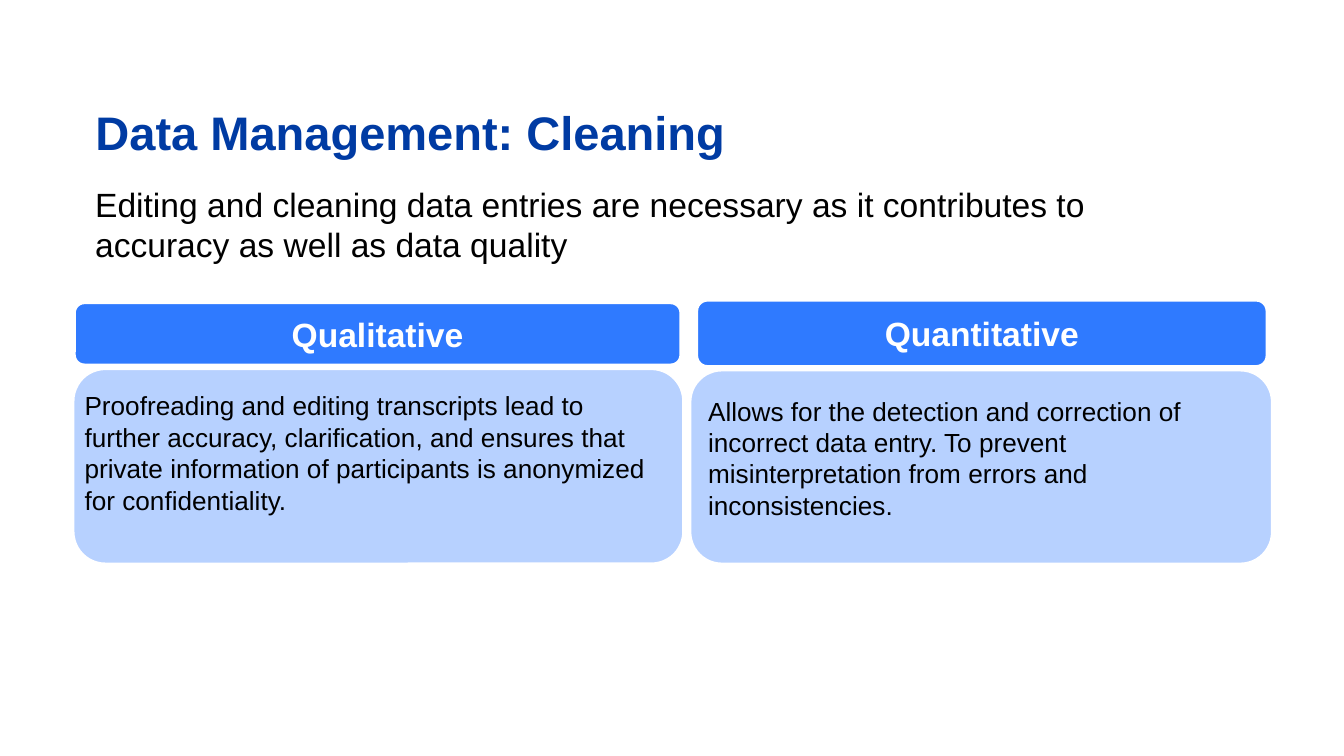
from pptx import Presentation
from pptx.dml.color import RGBColor
from pptx.enum.shapes import MSO_SHAPE as SHAPE
from pptx.enum.text import MSO_ANCHOR as ANCHOR, PP_ALIGN as ALIGN
from pptx.util import Pt

FONT = "Arial"
NAVY, BLUE, PALE = "003BA3", "2F7AFF", "B7D1FF"
BLACK, WHITE = "000000", "FFFFFF"

# Heading, heading box, panel box, body text, text box, top inset
COLUMNS = [
    ("Qualitative", (39.6, 162, 325.4, 33.8), (38.9, 197.3, 327.6, 105.1),
     "Proofreading and editing transcripts lead to further accuracy, "
     "clarification, and ensures that private information of participants "
     "is anonymized for confidentiality.",
     (40.3, 208.8, 310.6, 79.9), 0),
    ("Quantitative", (373, 160.6, 306, 36), (369.4, 198, 312.5, 104.4),
     "Allows for the detection and correction of incorrect data entry. "
     "To prevent misinterpretation from errors and inconsistencies.",
     (374.4, 208.8, 302.4, 72.7), 2.8),
]


def rgb(color):
    return RGBColor.from_string(color)


def points(box):
    return [Pt(v) for v in box]


def write(sp, text, size, color, bold=False, align=ALIGN.LEFT,
          anchor=ANCHOR.TOP, insets=(7.2, 3.6, 7.2, 3.6)):
    """Fill a shape with one paragraph; insets are left, top, right, bottom."""
    tf = sp.text_frame
    tf.word_wrap = True
    tf.vertical_anchor = anchor
    (tf.margin_left, tf.margin_top,
     tf.margin_right, tf.margin_bottom) = points(insets)
    p = tf.paragraphs[0]
    p.alignment = align
    r = p.add_run()
    r.text = text
    r.font.name = FONT
    r.font.size = Pt(size)
    r.font.bold = bold
    r.font.color.rgb = rgb(color)


def add_title(s, text, box):
    sp = s.shapes.title
    sp.left, sp.top, sp.width, sp.height = points(box)
    write(sp, text, 25.2, NAVY, bold=True, insets=(7.2, 10, 7.2, 7.2))


def add_text(s, text, box, size, **style):
    write(s.shapes.add_textbox(*points(box)), text, size, BLACK, **style)


def add_card(s, box, fill):
    sp = s.shapes.add_shape(SHAPE.ROUNDED_RECTANGLE, *points(box))
    sp.shadow.inherit = False
    sp.fill.solid()
    sp.fill.fore_color.rgb = rgb(fill)
    sp.line.color.rgb = rgb(WHITE)
    sp.line.width = Pt(2)
    return sp


def add_column(s, heading, heading_box, panel_box, body, body_box, top_inset):
    header = add_card(s, heading_box, BLUE)
    write(header, heading, 18, WHITE, bold=True, align=ALIGN.CENTER,
          anchor=ANCHOR.MIDDLE, insets=(5, 5, 5, 5))
    add_card(s, panel_box, PALE)
    add_text(s, body, body_box, 14, insets=(5, top_inset, 5, 0))


def main():
    prs = Presentation()
    prs.slide_width, prs.slide_height = Pt(720), Pt(405)
    s = prs.slides.add_slide(prs.slide_layouts[5])
    add_title(s, "Data Management: Cleaning", (43.9, 45.4, 620.6, 78.5))
    add_text(s, "Editing and cleaning data entries are necessary as it "
             "contributes to accuracy as well as data quality",
             (43.9, 95, 599.8, 51.1), 18)
    for column in COLUMNS:
        add_column(s, *column)
    prs.save("out.pptx")


if __name__ == "__main__":
    main()
